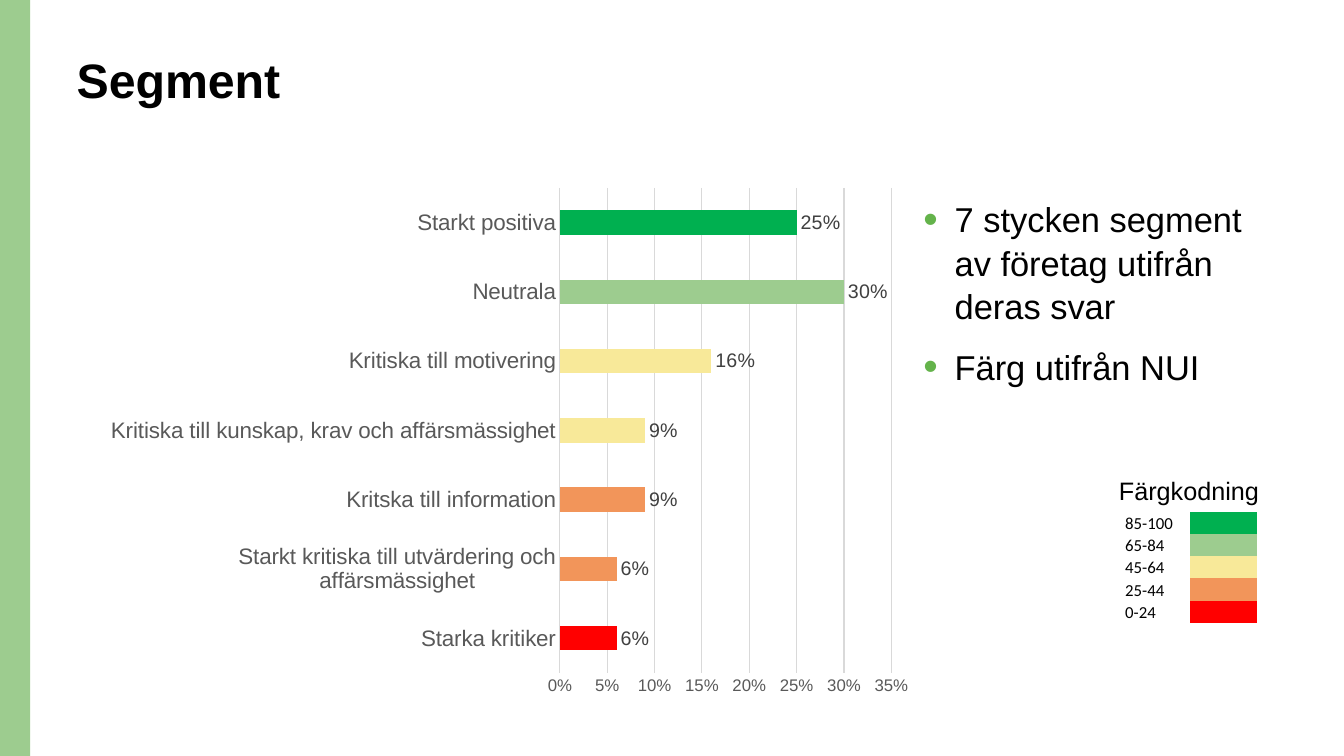
from lxml.etree import SubElement
from pptx import Presentation
from pptx.chart.data import CategoryChartData
from pptx.dml.color import RGBColor
from pptx.enum.chart import XL_CHART_TYPE as Chart, XL_LABEL_POSITION as Pos, XL_TICK_MARK as Tick
from pptx.enum.shapes import MSO_SHAPE as Shape
from pptx.enum.text import MSO_ANCHOR as Anchor, PP_ALIGN as Align
from pptx.oxml import parse_xml
from pptx.oxml.ns import nsdecls, qn
from pptx.util import Pt

PX = 9144  # 100 px to the inch
BLACK = RGBColor(0x00, 0x00, 0x00)
DARK = RGBColor(0x40, 0x40, 0x40)
GREY = RGBColor(0x59, 0x59, 0x59)
PALE = RGBColor(0xD9, 0xD9, 0xD9)
GREEN = RGBColor(0x00, 0xB0, 0x50)
LIGHT = RGBColor(0x9D, 0xCC, 0x8F)
YELLOW = RGBColor(0xF8, 0xE9, 0x99)
ORANGE = RGBColor(0xF2, 0x95, 0x5A)
RED = RGBColor(0xFF, 0x00, 0x00)
NO_STYLE = "{2D5ABB26-0587-4C30-8999-92F81FD0307C}"


def box(*lengths):
    """Turn px lengths into EMU."""
    return [n * PX for n in lengths]


def style(font, size, color=BLACK, name="Arial"):
    font.size = Pt(size)
    font.name = name
    font.color.rgb = color


prs = Presentation()
prs.slide_width, prs.slide_height = box(1333, 750)
slide = prs.slides.add_slide(prs.slide_layouts[5])
shapes = slide.shapes

# Side band
band = shapes.add_shape(Shape.RECTANGLE, *box(0, 0, 30, 750))
band.shadow.inherit = False
band.fill.solid()
band.fill.fore_color.rgb = LIGHT
band.line.fill.background()

# Title
title = shapes.title
title.left, title.top, title.width, title.height = box(66, 51, 1195, 99)
frame = title.text_frame
frame.text = "Segment"
frame.vertical_anchor = Anchor.TOP
para = frame.paragraphs[0]
para.alignment = Align.LEFT
para.line_spacing = 0.9
font = para.runs[0].font
style(font, 34.5)
font.bold = True

# Segment chart, bottom bar first
bars = [
    ("Starka kritiker", 0.06, RED),
    ("Starkt kritiska till utvärdering och affärsmässighet", 0.06, ORANGE),
    ("Kritska till information", 0.09, ORANGE),
    ("Kritiska till kunskap, krav och affärsmässighet", 0.09, YELLOW),
    ("Kritiska till motivering", 0.16, YELLOW),
    ("Neutrala", 0.30, LIGHT),
    ("Starkt positiva", 0.25, GREEN),
]
data = CategoryChartData(number_format="0%")
data.categories = [name for name, _, _ in bars]
data.add_series("Series 1", [share for _, share, _ in bars])
chart = shapes.add_chart(Chart.BAR_CLUSTERED, *box(95, 176, 822, 523), data).chart
chart.has_legend = False
chart.has_title = False
style(chart.font, 10)

plot = chart.plots[0]
plot.gap_width = 182
plot.vary_by_categories = False
series = plot.series[0]
for i, (_, _, color) in enumerate(bars):
    fill = series.points[i].format.fill
    fill.solid()
    fill.fore_color.rgb = color

labels = series.data_labels
labels.show_value = True
labels.position = Pos.OUTSIDE_END
labels.number_format = "0%"
labels.number_format_is_linked = False
style(labels.font, 14, DARK)

cats, vals = chart.category_axis, chart.value_axis
for axis, size in ((cats, 16), (vals, 12)):
    axis.major_tick_mark = axis.minor_tick_mark = Tick.NONE
    style(axis.tick_labels.font, size, GREY)
cats.has_major_gridlines = False
vals.has_major_gridlines = True
for line in (cats.format.line, vals.major_gridlines.format.line):
    line.color.rgb = PALE
    line.width = Pt(0.75)
vals.format.line.fill.background()
vals.minimum_scale, vals.maximum_scale, vals.major_unit = 0, 0.35, 0.05
vals.tick_labels.number_format = "0%"
vals.tick_labels.number_format_is_linked = False

area = chart._chartSpace.chart.plotArea
for old in area.findall(qn("c:layout")):
    area.remove(old)
area.insert(0, parse_xml(
    f'<c:layout {nsdecls("c")}><c:manualLayout><c:layoutTarget val="inner"/>'
    '<c:xMode val="edge"/><c:yMode val="edge"/><c:x val="0.56"/><c:y val="0.02"/>'
    '<c:w val="0.4"/><c:h val="0.92"/></c:manualLayout></c:layout>'))

# Bullets
frame = shapes.add_textbox(*box(906, 190, 365, 467)).text_frame
frame.word_wrap = True
points = ["7 stycken segment av företag utifrån deras svar", "Färg utifrån NUI"]
for i, text in enumerate(points):
    para = frame.add_paragraph() if i else frame.paragraphs[0]
    para.text = text
    para.line_spacing = 1.05
    para.space_before = Pt(12.3 if i else 0)
    props = para._p.get_or_add_pPr()
    props.set("marL", str(31 * PX))
    props.set("indent", str(-31 * PX))
    tint = SubElement(props, qn("a:buClr"))
    SubElement(tint, qn("a:srgbClr"), val="64B34B")
    SubElement(props, qn("a:buSzPct"), val="120000")
    SubElement(props, qn("a:buFont"), typeface="Arial")
    SubElement(props, qn("a:buChar"), char="•")
    style(para.runs[0].font, 24.6)

# Colour key
key = [("85-100", GREEN), ("65-84", LIGHT), ("45-64", YELLOW), ("25-44", ORANGE), ("0-24", RED)]
table = shapes.add_table(len(key), 2, *box(1115, 508, 132, 110)).table
table.first_row = table.horz_banding = False
table._tbl.tblPr.find(qn("a:tableStyleId")).text = NO_STYLE
table.columns[0].width, table.columns[1].width = box(65, 67)
for row, (text, color) in zip(table.rows, key):
    row.height = 22 * PX
    label, swatch = row.cells
    for cell in (label, swatch):
        cell.margin_left = cell.margin_right = cell.margin_top = PX
        cell.margin_bottom = 0
        cell.vertical_anchor = Anchor.BOTTOM
    label.text = text
    label.fill.background()
    style(label.text_frame.paragraphs[0].runs[0].font, 12, name="Calibri")
    swatch.fill.solid()
    swatch.fill.fore_color.rgb = color
    SubElement(swatch.text_frame.paragraphs[0]._p, qn("a:endParaRPr"), sz="1200")

frame = shapes.add_textbox(*box(1100, 467, 160, 40)).text_frame
frame.word_wrap = False
frame.text = "Färgkodning"
style(frame.paragraphs[0].runs[0].font, 18)

prs.save("out.pptx")
